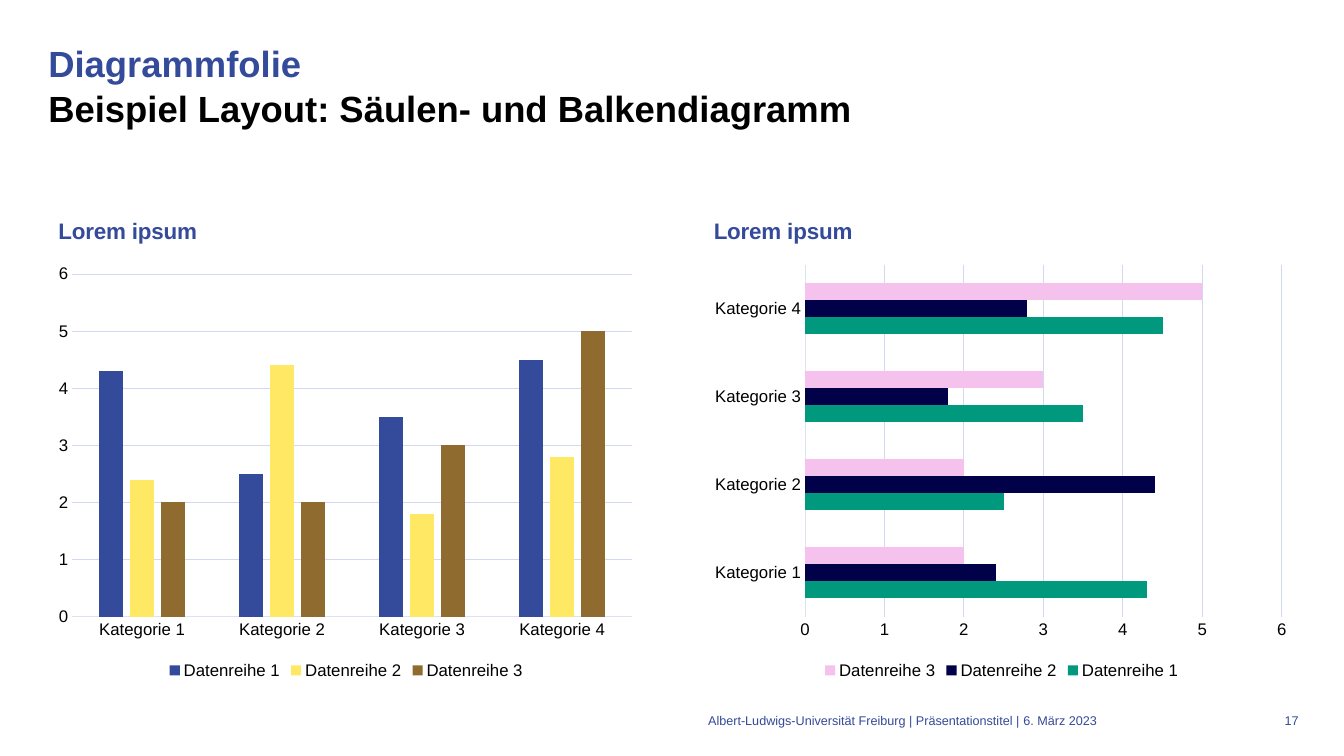
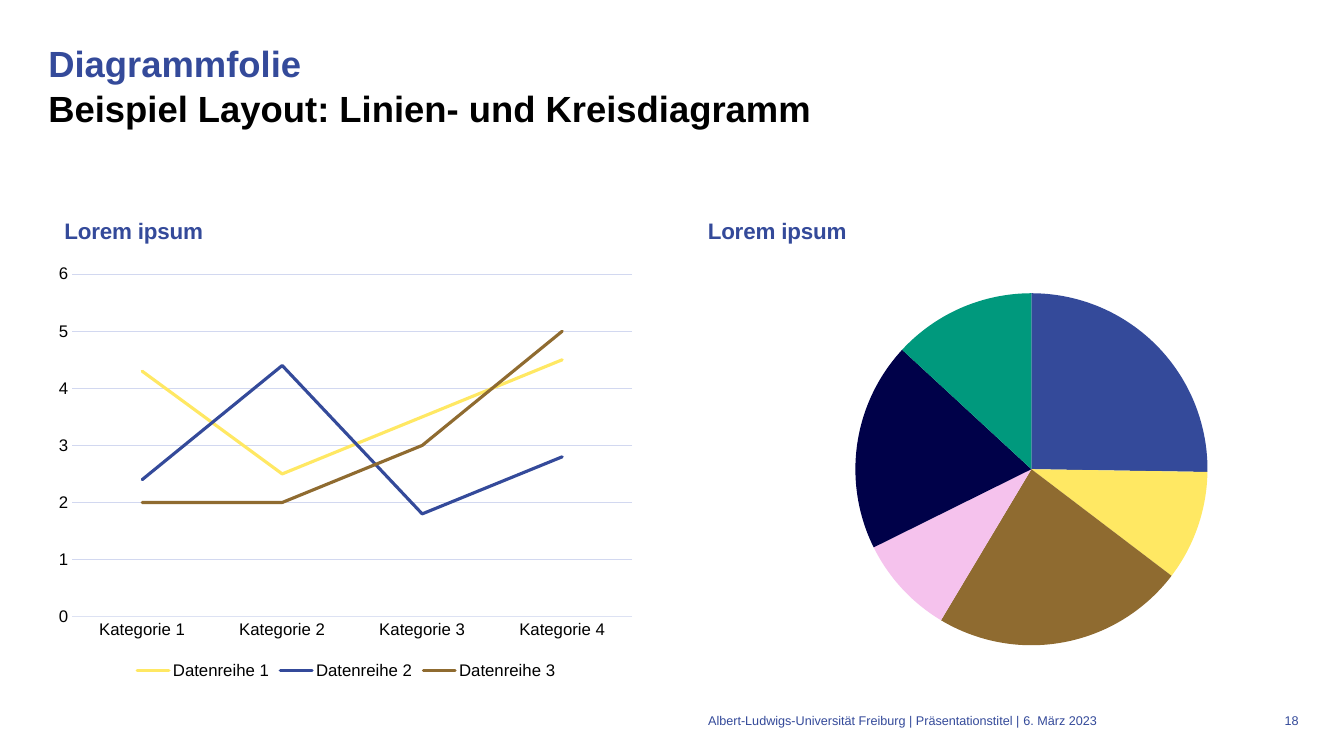
from lxml.etree import SubElement
from pptx import Presentation
from pptx.chart.data import CategoryChartData
from pptx.dml.color import RGBColor
from pptx.enum.chart import XL_CHART_TYPE as ChartType
from pptx.enum.chart import XL_LEGEND_POSITION as LegendPosition
from pptx.enum.chart import XL_TICK_MARK as TickMark
from pptx.enum.text import PP_ALIGN as Align
from pptx.oxml.ns import qn
from pptx.util import Inches, Pt

FONT = "Arial"
BLUE, YELLOW, BROWN = "344A9A", "FFE863", "8F6B30"
PINK, NAVY, GREEN = "F5C2ED", "000149", "00997D"
BLACK, AXIS, GRID = "000000", "DDE2F3", "D2D8F0"
LEFT, RIGHT = 0.48, 6.98
CATEGORIES = [f"Kategorie {number}" for number in range(1, 5)]
SERIES = {
    "Datenreihe 1": (4.3, 2.5, 3.5, 4.5),
    "Datenreihe 2": (2.4, 4.4, 1.8, 2.8),
    "Datenreihe 3": (2, 2, 3, 5),
}
SHARES = {"Series 1": (25, 10, 23, 9, 19, 13)}


def rgb(color):
    """Turn a hex string into a colour."""
    return RGBColor.from_string(color)


def style_font(font, size, color, bold=False):
    """Set typeface, size, colour and weight."""
    font.name, font.size, font.bold = FONT, Pt(size), bold
    font.color.rgb = rgb(color)


def style_line(line, color, width):
    """Set colour and width of a line."""
    line.color.rgb = rgb(color)
    line.width = Pt(width)


def fill_solid(item, color):
    """Fill a chart series or point with one colour."""
    item.format.fill.solid()
    item.format.fill.fore_color.rgb = rgb(color)


def add_box(page, left, top, width, height, align=Align.LEFT, inset=0):
    """Add a text box and return its first paragraph."""
    box = page.shapes.add_textbox(Inches(left), Inches(top), Inches(width), Inches(height))
    frame = box.text_frame
    frame.word_wrap = True
    frame.margin_left = Inches(inset)
    frame.margin_top = frame.margin_right = frame.margin_bottom = 0
    para = frame.paragraphs[0]
    para.alignment = align
    return para


def add_span(para, text, size, color, bold=False):
    """Append a styled run to a paragraph."""
    span = para.add_run()
    span.text = text
    style_font(span.font, size, color, bold)


def add_page(deck, subtitle, number):
    """Add a page with its title and footer."""
    page = deck.slides.add_slide(deck.slide_layouts[6])
    para = add_box(page, 0.48, 0.4, 12.4, 1.45)
    para.line_spacing = Pt(32)
    add_span(para, "Diagrammfolie", 26, BLUE, True)
    para.add_line_break()
    add_span(para, subtitle, 26, BLACK, True)
    footers = (
        ("Albert-Ludwigs-Universität Freiburg | Präsentationstitel |", 3.26, 6.85, Align.RIGHT, 0),
        ("6. März 2023", 10.11, 1.57, Align.LEFT, 0.04),
        (str(number), 12.49, 0.39, Align.RIGHT, 0),
    )
    for text, left, width, align, inset in footers:
        add_span(add_box(page, left, 7.07, width, 0.2, align, inset), text, 9, BLUE)
    return page


def place(parent, index, **layout):
    """Give a chart part a manual layout at the given child index."""
    for old in parent.findall(qn("c:layout")):
        parent.remove(old)
    holder = SubElement(parent, qn("c:layout"))
    parent.insert(index, holder)
    manual = SubElement(holder, qn("c:manualLayout"))
    for tag, value in layout.items():
        SubElement(manual, qn(f"c:{tag}")).set("val", str(value))


def add_chart(page, kind, left, title_x, plot, categories, series):
    """Add a chart with a placed title and plot area."""
    data = CategoryChartData()
    data.categories = categories
    for name, values in series.items():
        data.add_series(name, values)
    chart = page.shapes.add_chart(
        kind, Inches(left), Inches(2.06), Inches(5.91), Inches(4.72), data).chart
    style_font(chart.font, 10, BLUE)
    chart.has_legend = False
    chart.has_title = True
    add_span(chart.chart_title.text_frame.paragraphs[0], "Lorem ipsum", 16, BLUE, True)
    place(chart.chart_title.element, 1, xMode="edge", yMode="edge", x=title_x, y=0.01)
    x, y, width, height = plot
    place(chart.element.chart.plotArea, 0, layoutTarget="inner", xMode="edge",
          yMode="edge", x=x, y=y, w=width, h=height)
    chart.plots[0].vary_by_categories = False
    return chart


def style_axes(chart):
    """Style both axes and the legend."""
    for axis in (chart.category_axis, chart.value_axis):
        axis.major_tick_mark = axis.minor_tick_mark = TickMark.NONE
        style_font(axis.tick_labels.font, 12, BLACK)
    style_line(chart.category_axis.format.line, AXIS, 0.75)
    scale = chart.value_axis
    scale.minimum_scale, scale.maximum_scale, scale.major_unit = 0, 6, 1
    scale.format.line.fill.background()
    scale.has_major_gridlines = True
    style_line(scale.major_gridlines.format.line, GRID, 0.75)
    chart.has_legend = True
    chart.legend.position = LegendPosition.BOTTOM
    chart.legend.include_in_layout = False
    style_font(chart.legend.font, 12, BLACK)


def add_bars(page, kind, left, plot, colors, overlap):
    """Add a clustered column or bar chart."""
    chart = add_chart(page, kind, left, 0.01, plot, CATEGORIES, SERIES)
    style_axes(chart)
    chart.plots[0].gap_width = 219
    chart.plots[0].overlap = overlap
    for series, color in zip(chart.plots[0].series, colors):
        fill_solid(series, color)


def add_lines(page, left, plot, colors):
    """Add a line chart."""
    chart = add_chart(page, ChartType.LINE, left, 0.02, plot, CATEGORIES, SERIES)
    style_axes(chart)
    for series, color in zip(chart.plots[0].series, colors):
        series.smooth = False
        style_line(series.format.line, color, 2.25)
    for line in chart.element.xpath(".//c:ser/c:spPr/a:ln"):
        line.set("cap", "rnd")


def add_pie(page, left, plot, colors):
    """Add a pie chart with one colour per slice."""
    labels = [str(number) for number in range(1, 7)]
    chart = add_chart(page, ChartType.PIE, left, 0, plot, labels, SHARES)
    chart.plots[0].vary_by_categories = True
    for index, color in enumerate(colors):
        fill_solid(chart.plots[0].series[0].points[index], color)


def main():
    """Build and save the deck."""
    deck = Presentation()
    deck.slide_width, deck.slide_height = Inches(13.33), Inches(7.5)
    upright = (0.04, 0.14, 0.94, 0.72)

    page = add_page(deck, "Beispiel Layout: Säulen- und Balkendiagramm", 17)
    add_bars(page, ChartType.COLUMN_CLUSTERED, LEFT, upright, (BLUE, YELLOW, BROWN), -27)
    add_bars(page, ChartType.BAR_CLUSTERED, RIGHT, (0.17, 0.12, 0.8, 0.74),
             (GREEN, NAVY, PINK), 0)

    page = add_page(deck, "Beispiel Layout: Linien- und Kreisdiagramm", 18)
    add_lines(page, LEFT, upright, (YELLOW, BLUE, BROWN))
    add_pie(page, RIGHT, (0.1, 0.18, 0.9, 0.74),
            (BLUE, YELLOW, BROWN, PINK, NAVY, GREEN))
    deck.save("out.pptx")


if __name__ == "__main__":
    main()
